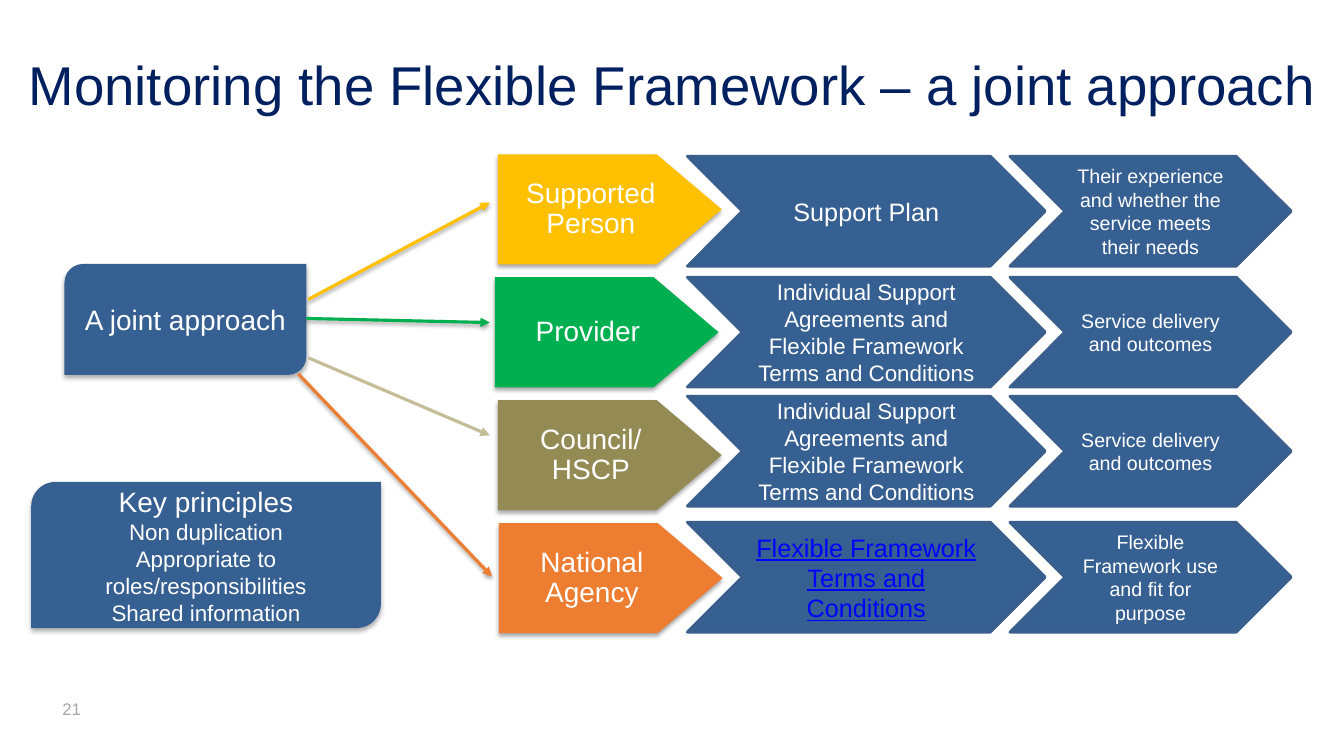
"""Build the slide on monitoring the Flexible Framework jointly."""
from dataclasses import dataclass

from lxml import etree
from pptx import Presentation
from pptx.dml.color import RGBColor
from pptx.enum.shapes import MSO_CONNECTOR, MSO_SHAPE
from pptx.enum.text import MSO_ANCHOR, MSO_AUTO_SIZE, PP_ALIGN
from pptx.oxml.ns import qn
from pptx.util import Pt

STRAIGHT = MSO_CONNECTOR.STRAIGHT
CHEVRON = MSO_SHAPE.CHEVRON
PENTAGON = MSO_SHAPE.PENTAGON
ROUND_DIAGONAL = MSO_SHAPE.ROUND_2_DIAG_RECTANGLE
MIDDLE = MSO_ANCHOR.MIDDLE
CENTER = PP_ALIGN.CENTER
LEFT = PP_ALIGN.LEFT
NO_AUTOFIT = MSO_AUTO_SIZE.NONE


@dataclass(frozen=True)
class Theme:
    font: str = "Arial"
    navy: str = "002060"
    blue: str = "376092"
    outline: str = "3A5F8C"
    white: str = "FFFFFF"
    grey: str = "A6A6A6"
    link: str = "0000FF"
    amber: str = "FFC000"
    green: str = "00B050"
    olive: str = "948A54"
    sand: str = "C4BD97"
    orange: str = "ED7D31"
    title_size: float = 39
    label_size: float = 20
    document_size: float = 18
    body_size: float = 16
    check_size: float = 14
    number_size: float = 12


THEME = Theme()
AGREEMENTS = ("Individual Support Agreements and "
              "Flexible Framework Terms and Conditions")
PARTY_TOP, PARTY_PITCH, PARTY_SIZE = 110.2, 87.8, (159.8, 78.7)
CHEVRON_HEIGHT = 78.5
DOCUMENT_LEFT, DOCUMENT_WIDTH = 491, 255.6
CHECK_LEFT, CHECK_WIDTH = 721.4, 200.9

ROWS = [
    ("Supported Person", THEME.amber, 355.7, 111.6,
     "Support Plan", THEME.document_size,
     "Their experience and whether the service meets their needs"),
    ("Provider", THEME.green, 353.5, 198,
     AGREEMENTS, THEME.body_size, "Service delivery and outcomes"),
    ("Council/ HSCP", THEME.olive, 355.7, 283,
     AGREEMENTS, THEME.body_size, "Service delivery and outcomes"),
    ("National Agency", THEME.orange, 356.4, 373,
     "Flexible Framework Terms and Conditions", THEME.document_size,
     "Flexible Framework use and fit for purpose"),
]
ARROWS = [
    (THEME.amber, (220.3, 213.8), (349.9, 144.7), True),
    (THEME.green, (218.9, 227.5), (349.9, 230.4), True),
    (THEME.sand, (220.3, 255.6), (349.9, 311), False),
    (THEME.orange, (213.1, 267.1), (351.4, 411.8), True),
]
KEY_PRINCIPLES = [
    ("Key principles", THEME.label_size),
    ("Non duplication", THEME.body_size),
    ("Appropriate to roles/responsibilities", THEME.body_size),
    ("Shared information", THEME.body_size),
]


def add_run(paragraph, text, size, color, underline=None):
    """Add one formatted run to a paragraph."""
    run = paragraph.add_run()
    run.text = text
    run.font.name = THEME.font
    run.font.size = Pt(size)
    run.font.color.rgb = RGBColor.from_string(color)
    run.font.underline = underline


def write_lines(shape, lines, color=THEME.white, align=CENTER, underline=None):
    """Write (text, size) lines into a shape and return its text frame."""
    frame = shape.text_frame
    frame.word_wrap = True
    frame.auto_size = NO_AUTOFIT
    frame.vertical_anchor = MIDDLE
    for index, (text, size) in enumerate(lines):
        paragraph = frame.add_paragraph() if index else frame.paragraphs[0]
        paragraph.alignment = align
        add_run(paragraph, text, size, color, underline)
    return frame


def set_shadow(properties, opacity=None, blur=0, distance=0):
    """Give shape properties a soft downward shadow, or none."""
    effects = properties.find(qn("a:effectLst"))
    if effects is None:
        effects = etree.SubElement(properties, qn("a:effectLst"))
    if opacity:
        shadow = etree.SubElement(
            effects, qn("a:outerShdw"), blurRad=str(Pt(blur)),
            dist=str(Pt(distance)), dir="5400000", rotWithShape="0")
        color = etree.SubElement(shadow, qn("a:srgbClr"), val="000000")
        etree.SubElement(color, qn("a:alpha"), val=str(opacity * 1000))


def add_block(slide, kind, box, fill, outline=None):
    """Add a filled preset shape with an optional outline and no shadow."""
    shape = slide.shapes.add_shape(kind, *map(Pt, box))
    shape.fill.solid()
    shape.fill.fore_color.rgb = RGBColor.from_string(fill)
    if outline:
        shape.line.color.rgb = RGBColor.from_string(outline)
        shape.line.width = Pt(2)
    else:
        shape.line.fill.background()
    shape.shadow.inherit = False
    return shape


def add_panel(slide, box, lines):
    """Add a shadowed blue panel with two rounded corners."""
    panel = add_block(slide, ROUND_DIAGONAL, box, THEME.blue)
    set_shadow(panel.element.spPr, 32, 3.5, 2.2)
    write_lines(panel, lines)


def add_party(slide, box, name, color):
    """Add the coloured pentagon that names a party."""
    party = add_block(slide, PENTAGON, box, color)
    party.adjustments[0] = 0.59
    set_shadow(party.element.spPr, 35, 3.1, 1.8)
    frame = write_lines(party, [(name, THEME.label_size)])
    frame.margin_left = frame.margin_top = frame.margin_bottom = Pt(2.2)
    frame.margin_right = Pt(6)
    frame.paragraphs[0].line_spacing = 0.9


def add_chevron(slide, box, text, size, linked=False):
    """Add a blue chevron, with its text styled as a link if asked."""
    chevron = add_block(slide, CHEVRON, box, THEME.blue, THEME.outline)
    color = THEME.link if linked else THEME.white
    write_lines(chevron, [(text, size)], color, underline=linked or None)


def add_arrow(slide, color, start, end, shadowed):
    """Add a straight arrow between two points."""
    arrow = slide.shapes.add_connector(STRAIGHT, *map(Pt, start + end))
    arrow.line.color.rgb = RGBColor.from_string(color)
    arrow.line.width = Pt(2.25)
    etree.SubElement(arrow.line._get_or_add_ln(), qn("a:tailEnd"),
                     type="triangle")
    set_shadow(arrow.element.spPr, 35 if shadowed else None, 3.1, 1.8)


def add_title(slide, text):
    """Place and fill the title placeholder."""
    title = slide.shapes.title
    title.left, title.top, title.width, title.height = map(
        Pt, (0, 15.1, 960, 90))
    write_lines(title, [(text, THEME.title_size)], THEME.navy)


def add_page_number(slide, number):
    """Add the page number at the bottom left."""
    box = slide.shapes.add_textbox(*map(Pt, (37.4, 495.4, 157.7, 21.6)))
    write_lines(box, [(number, THEME.number_size)], THEME.grey, LEFT)


def main():
    """Build and save the presentation."""
    presentation = Presentation()
    presentation.slide_width, presentation.slide_height = Pt(960), Pt(540)
    slide = presentation.slides.add_slide(presentation.slide_layouts[5])
    add_title(slide, "Monitoring the Flexible Framework – a joint approach")
    add_page_number(slide, "21")
    add_panel(slide, (46.1, 188.6, 172.8, 79.2),
              [("A joint approach", THEME.label_size)])
    add_panel(slide, (22.3, 344.2, 249.8, 104.4), KEY_PRINCIPLES)
    for arrow in ARROWS:
        add_arrow(slide, *arrow)
    for index, row in enumerate(ROWS):
        name, color, left, top, document, size, check = row
        party_top = PARTY_TOP + index * PARTY_PITCH
        add_party(slide, (left, party_top, *PARTY_SIZE), name, color)
        add_chevron(slide, (DOCUMENT_LEFT, top, DOCUMENT_WIDTH, CHEVRON_HEIGHT),
                    document, size, linked=row is ROWS[-1])
        add_chevron(slide, (CHECK_LEFT, top, CHECK_WIDTH, CHEVRON_HEIGHT),
                    check, THEME.check_size)
    presentation.save("out.pptx")


if __name__ == "__main__":
    main()
